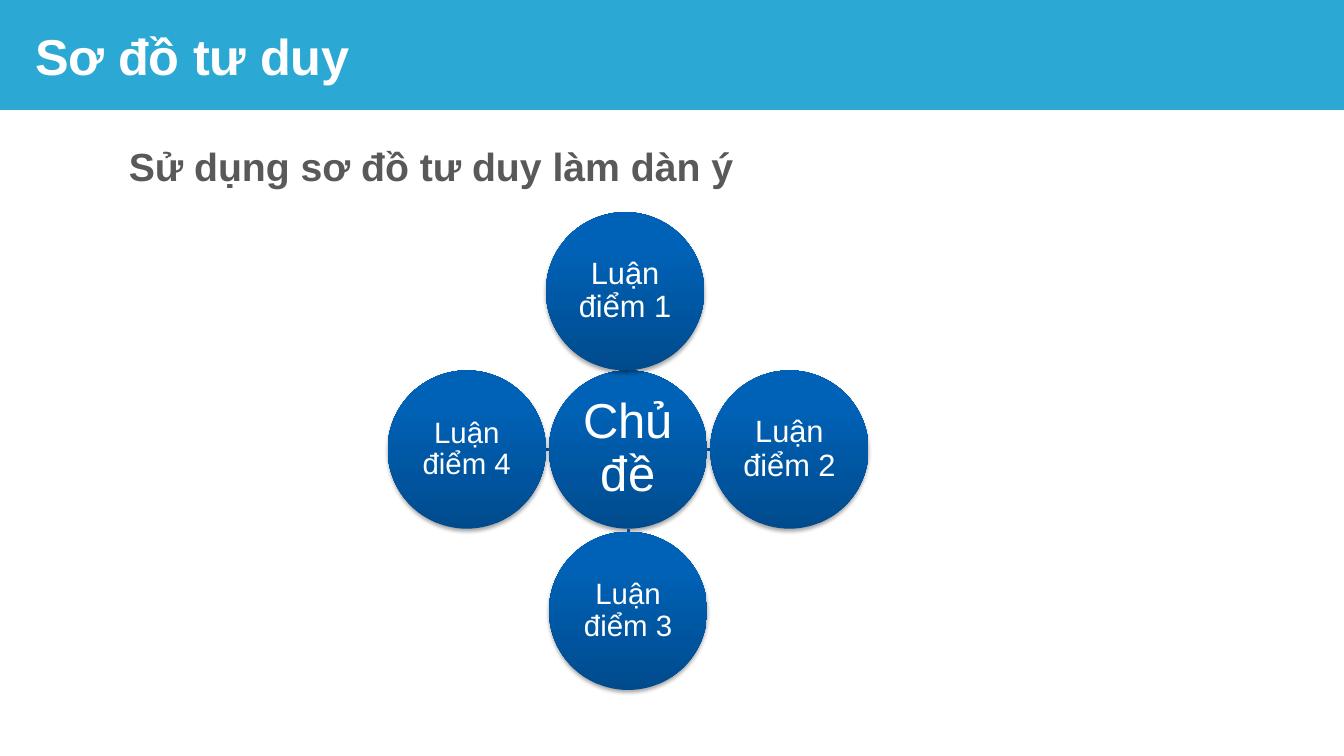
from dataclasses import dataclass

from lxml.etree import SubElement
from pptx import Presentation
from pptx.dml.color import RGBColor
from pptx.enum.shapes import MSO_CONNECTOR as Connector, MSO_SHAPE as Shape
from pptx.enum.text import MSO_ANCHOR as Anchor, PP_ALIGN as Align
from pptx.oxml.ns import qn
from pptx.util import Inches, Pt


@dataclass(frozen=True)
class Theme:
    font: str = "Arial"
    banner: str = "2CA8D4"
    white: str = "FFFFFF"
    heading: str = "595959"
    circle_dark: str = "004B8D"
    circle_light: str = "0062B7"
    link: str = "005197"
    shadow: str = "000000"
    title_size: int = 36
    heading_size: int = 28
    topic_size: int = 35
    point_size: int = 22
    small_point_size: int = 21


def write_text(frame, text, *, font, size, color, bold=False, align=Align.LEFT,
               anchor=Anchor.TOP, wrap=True, inset=None, line_spacing=None, tracking=None):
    frame.word_wrap = wrap
    frame.vertical_anchor = anchor
    if inset is not None:
        frame.margin_left = frame.margin_right = Inches(inset)
        frame.margin_top = frame.margin_bottom = Inches(inset)
    paragraph = frame.paragraphs[0]
    paragraph.alignment = align
    if line_spacing:
        paragraph.line_spacing = line_spacing
    run = paragraph.add_run()
    run.text = text
    run.font.name = font
    run.font.size = Pt(size)
    run.font.bold = bold
    run.font.color.rgb = RGBColor.from_string(color)
    if tracking is not None:
        run._r.get_or_add_rPr().set("spc", str(round(tracking * 100)))


class MindMapSlide:
    def __init__(self, slide, theme):
        self.shapes = slide.shapes
        self.theme = theme

    def banner(self, width, height):
        shape = self.shapes.add_shape(Shape.RECTANGLE, 0, 0, Inches(width), Inches(height))
        shape.shadow.inherit = False
        shape.fill.solid()
        shape.fill.fore_color.rgb = RGBColor.from_string(self.theme.banner)
        shape.line.fill.background()

    def text(self, text, left, top, width, height, **style):
        box = self.shapes.add_textbox(Inches(left), Inches(top), Inches(width), Inches(height))
        write_text(box.text_frame, text, font=self.theme.font, **style)

    def circle(self, text, center_x, center_y, diameter, size):
        radius = diameter / 2
        shape = self.shapes.add_shape(Shape.OVAL, Inches(center_x - radius),
                                      Inches(center_y - radius),
                                      Inches(diameter), Inches(diameter))
        shape.line.fill.background()
        shape.fill.gradient()
        shape.fill.gradient_angle = 90
        colors = (self.theme.circle_dark, self.theme.circle_light)
        for stop, position, color in zip(shape.fill.gradient_stops, (0, 0.8), colors):
            stop.position = position
            stop.color.rgb = RGBColor.from_string(color)
        self.drop_shadow(shape)
        write_text(shape.text_frame, text, font=self.theme.font, size=size,
                   color=self.theme.white, align=Align.CENTER, anchor=Anchor.MIDDLE,
                   inset=0.02, line_spacing=0.9)

    def drop_shadow(self, shape):
        shape.shadow.inherit = False
        effects = shape._element.spPr.find(qn("a:effectLst"))
        shadow = SubElement(effects, qn("a:outerShdw"), blurRad=str(Pt(3.1)),
                            dist=str(Pt(1.8)), dir="5400000", rotWithShape="0")
        color = SubElement(shadow, qn("a:srgbClr"), val=self.theme.shadow)
        SubElement(color, qn("a:alpha"), val="35000")

    def link(self, start_x, start_y, end_x, end_y):
        line = self.shapes.add_connector(Connector.STRAIGHT, Inches(start_x), Inches(start_y),
                                         Inches(end_x), Inches(end_y))
        line.line.color.rgb = RGBColor.from_string(self.theme.link)
        line.line.width = Pt(2)
        SubElement(line._element.spPr, qn("a:effectLst"))


def main():
    theme = Theme()
    presentation = Presentation()
    presentation.slide_width = Inches(13.33)
    presentation.slide_height = Inches(7.5)
    page = MindMapSlide(presentation.slides.add_slide(presentation.slide_layouts[6]), theme)

    page.banner(13.33, 1.09)
    page.text("Sơ đồ tư duy", 0.25, 0.12, 12.93, 0.85, size=theme.title_size,
              color=theme.white, bold=True, anchor=Anchor.MIDDLE, tracking=-0.1)

    hub_x, hub_y, diameter, pitch = 6.23, 4.46, 1.57, 1.6
    half_link = (pitch - diameter) / 2
    page.circle("Chủ đề", hub_x, hub_y, diameter, theme.topic_size)

    points = [
        (0, -1, -0.03, -diameter, theme.point_size),
        (1, 0, pitch, 0, theme.point_size),
        (0, 1, 0, pitch, theme.small_point_size),
        (-1, 0, -pitch, 0, theme.small_point_size),
    ]
    for number, (across, down, offset_x, offset_y, size) in enumerate(points, 1):
        middle_x, middle_y = hub_x + offset_x / 2, hub_y + offset_y / 2
        page.link(middle_x - across * half_link, middle_y - down * half_link,
                  middle_x + across * half_link, middle_y + down * half_link)
        page.circle(f"Luận điểm {number}", hub_x + offset_x, hub_y + offset_y, diameter, size)

    page.text("Sử dụng sơ đồ tư duy làm dàn ý", 1.18, 1.36, 6.27, 0.57,
              size=theme.heading_size, color=theme.heading, bold=True, wrap=False)
    presentation.save("out.pptx")


if __name__ == "__main__":
    main()
